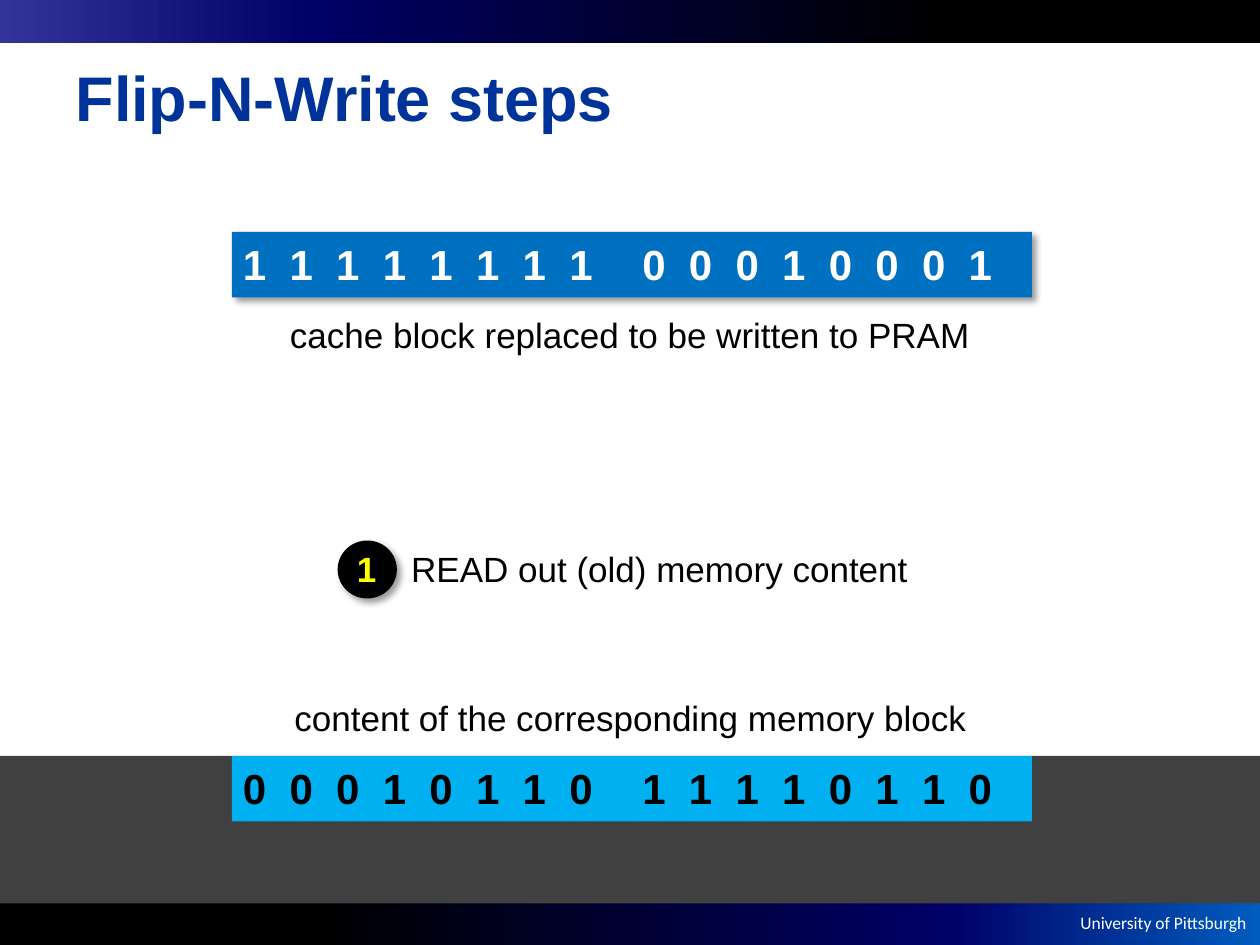
from pptx import Presentation
from pptx.dml.color import RGBColor
from pptx.enum.shapes import MSO_SHAPE
from pptx.enum.text import MSO_ANCHOR, PP_ALIGN
from pptx.oxml import parse_xml
from pptx.oxml.ns import nsdecls, qn
from pptx.util import Inches, Pt

BIT_PITCH = 0.37
BLOCK_LEFT, BLOCK_WIDTH, BLOCK_HEIGHT = 1.84, 6.35, 0.52
HALF_LEFTS = (1.83, 5)


def colour(value):
    return RGBColor.from_string(value)


def add_run(para, text, size, value, bold=False, font="Arial"):
    span = para.add_run()
    span.text = text
    span.font.name = font
    span.font.size = Pt(size)
    span.font.bold = bold
    span.font.color.rgb = colour(value)


def add_text(page, place, text, size, value, bold=False, font="Arial",
             align=PP_ALIGN.CENTER):
    box = page.shapes.add_textbox(*map(Inches, place))
    box.text_frame.word_wrap = False
    para = box.text_frame.paragraphs[0]
    para.alignment = align
    add_run(para, text, size, value, bold, font)
    return para


def add_block(page, place, value, kind=MSO_SHAPE.RECTANGLE, shadow=False):
    shape = page.shapes.add_shape(kind, *map(Inches, place))
    shape.fill.solid()
    shape.fill.fore_color.rgb = colour(value)
    shape.line.fill.background()
    shape.shadow.inherit = False
    if shadow:
        effects = shape._element.spPr.find(qn("a:effectLst"))
        effects.append(parse_xml(
            f'<a:outerShdw {nsdecls("a")} blurRad="{Pt(4)}" dist="{Pt(3)}" '
            'dir="2700000" algn="tl" rotWithShape="0"><a:srgbClr val="000000">'
            '<a:alpha val="40000"/></a:srgbClr></a:outerShdw>'))
    return shape


def add_gradient_bar(page, top, stops):
    bar = add_block(page, (0, top, 10, 0.34), "000000")
    bar.fill.gradient()
    bar.fill.gradient_angle = 0
    stop_list = bar._element.spPr.find(qn("a:gradFill")).find(qn("a:gsLst"))
    for stop in list(stop_list):
        stop_list.remove(stop)
    for position, value in stops:
        stop_list.append(parse_xml(
            f'<a:gs {nsdecls("a")} pos="{position * 1000}">'
            f'<a:srgbClr val="{value}"/></a:gs>'))


def add_bits(page, left, top, bits, value):
    # Tab stops keep the bits on an even pitch
    para = add_text(page, (left, top, 3.3, 0.5), "\t".join(bits), 24, value,
                    bold=True, align=PP_ALIGN.LEFT)
    stops = "".join(f'<a:tab pos="{Inches(BIT_PITCH * i)}" algn="l"/>'
                    for i in range(1, len(bits)))
    para._p.get_or_add_pPr().append(
        parse_xml(f'<a:tabLst {nsdecls("a")}>{stops}</a:tabLst>'))


def add_memory_block(page, top, fill, halves, text_colour, shadow=False):
    add_block(page, (BLOCK_LEFT, top, BLOCK_WIDTH, BLOCK_HEIGHT), fill,
              shadow=shadow)
    for left, bits in zip(HALF_LEFTS, halves):
        add_bits(page, left, top, bits, text_colour)


def add_title(page, text):
    title = page.shapes.title
    title.left, title.top, title.width, title.height = map(
        Inches, (0.5, 0.14, 9, 1.25))
    title.text_frame.vertical_anchor = MSO_ANCHOR.MIDDLE
    para = title.text_frame.paragraphs[0]
    para.alignment = PP_ALIGN.LEFT
    add_run(para, text, 36, "003399", bold=True)


def main():
    deck = Presentation()
    deck.slide_width, deck.slide_height = Inches(10), Inches(7.5)
    page = deck.slides.add_slide(deck.slide_layouts[5])

    # Header and footer
    add_gradient_bar(page, 7.16, [(0, "000000"), (25, "000000"),
                                  (75, "000066"), (100, "005CBF")])
    add_text(page, (8.33, 7.19, 1.66, 0.27), "University of Pittsburgh", 10,
             "FFFFFF", font="Calibri", align=PP_ALIGN.RIGHT)
    add_gradient_bar(page, 0, [(0, "333399"), (25, "000066"),
                               (75, "000000"), (100, "000000")])
    add_title(page, "Flip-N-Write steps")

    # Cache block
    add_memory_block(page, 1.84, "0070C0", ("11111111", "00010001"), "FFFFFF",
                     shadow=True)
    add_text(page, (2.14, 2.44, 5.72, 0.44),
             "cache block replaced to be written to PRAM", 20, "000000")

    # Step 1
    add_block(page, (2.68, 4.29, 0.47, 0.46), "000000", MSO_SHAPE.OVAL,
              shadow=True)
    add_text(page, (2.73, 4.3, 0.36, 0.44), "1", 20, "FFFF00", bold=True)
    add_text(page, (3.15, 4.3, 4.17, 0.44), "READ out (old) memory content",
             20, "000000")

    # Memory
    add_block(page, (0, 6, 10, 1.17), "404040")
    add_memory_block(page, 6, "00B0F0", ("00010110", "11110110"), "000000")
    add_text(page, (2.22, 5.48, 5.57, 0.44),
             "content of the corresponding memory block", 20, "000000")

    deck.save("out.pptx")


if __name__ == "__main__":
    main()
